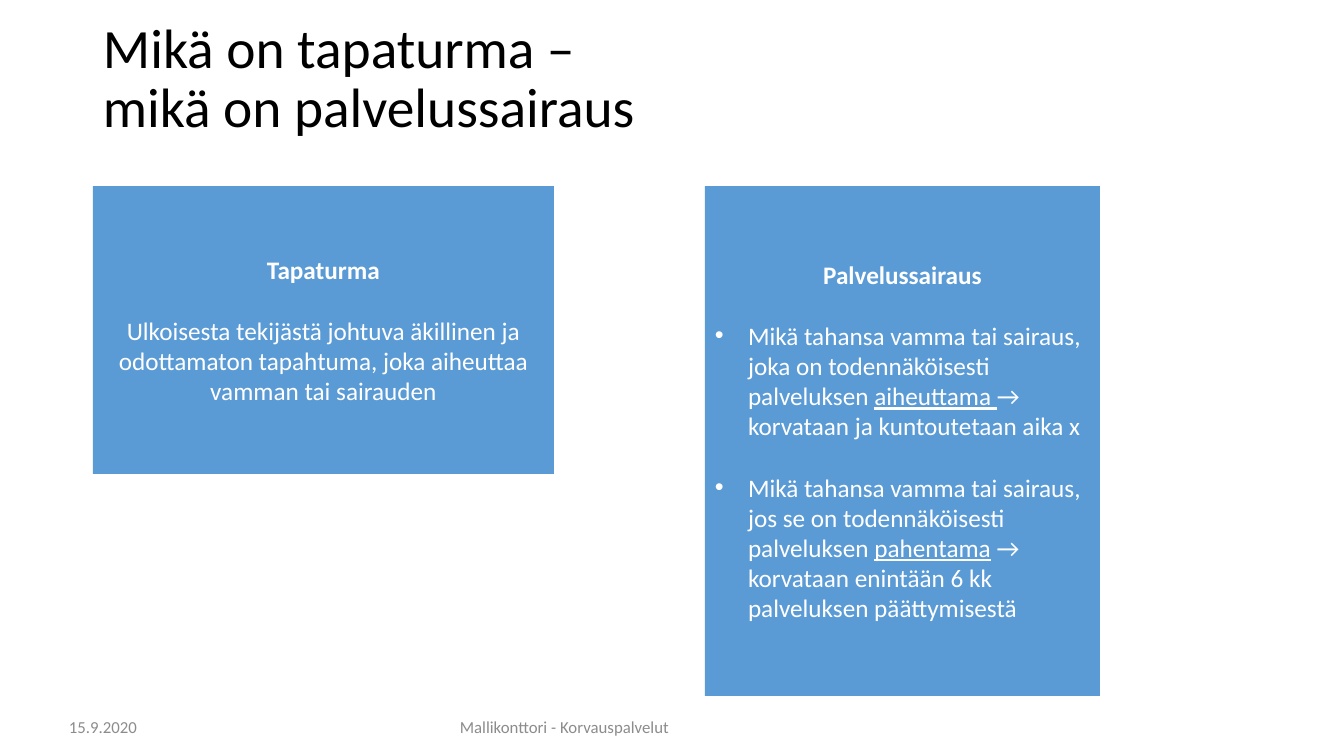
from lxml import etree
from pptx import Presentation, util as u
from pptx.dml.color import RGBColor
from pptx.enum import shapes, text
from pptx.oxml.ns import qn

PX = 914400 / 100.8
LEFT, CENTER = text.PP_ALIGN.LEFT, text.PP_ALIGN.CENTER


def px(n):
    return u.Emu(round(n * PX))


def rgb(value):
    return RGBColor.from_string(value)


class Deck:
    font = "Calibri"
    blue, white, black, grey = "5B9BD5", "FFFFFF", "000000", "8C8C8C"

    def __init__(self, width, height):
        self.prs = Presentation()
        self.prs.slide_width = px(width)
        self.prs.slide_height = px(height)
        self.s = self.prs.slides.add_slide(self.prs.slide_layouts[5])

    def style(self, p, size, color, align=LEFT, bold=False):
        p.alignment = align
        for r in p.runs:
            r.font.name = self.font
            r.font.size = u.Pt(size)
            r.font.bold = bold
            r.font.color.rgb = rgb(color)

    def frame(self, sp):
        tf = sp.text_frame
        tf.word_wrap = True
        tf.auto_size = text.MSO_AUTO_SIZE.NONE
        tf.vertical_anchor = text.MSO_ANCHOR.MIDDLE
        tf.margin_left = tf.margin_right = px(10)
        tf.margin_top = tf.margin_bottom = px(5)
        return tf

    def title(self, words, x, y, w, h):
        sp = self.s.shapes.title
        sp.left, sp.top, sp.width, sp.height = map(px, (x, y, w, h))
        tf = self.frame(sp)
        tf.text = words
        p = tf.paragraphs[0]
        p.line_spacing = 0.9
        self.style(p, 39.6, self.black)

    def label(self, words, x, y, w, h, align=LEFT):
        tf = self.frame(self.s.shapes.add_textbox(*map(px, (x, y, w, h))))
        tf.text = words
        self.style(tf.paragraphs[0], 12, self.grey, align)

    def box(self, heading, x, y, w, h):
        sp = self.s.shapes.add_shape(
            shapes.MSO_SHAPE.RECTANGLE, *map(px, (x, y, w, h)))
        sp.shadow.inherit = False
        sp.fill.solid()
        sp.fill.fore_color.rgb = rgb(self.blue)
        sp.line.fill.background()
        tf = self.frame(sp)
        tf.text = heading
        self.style(tf.paragraphs[0], 18, self.white, CENTER, True)
        return tf

    def body(self, tf, *parts, align=LEFT, gap=22, indent=0, bullet=False):
        p = tf.add_paragraph()
        for i, words in enumerate(parts):
            r = p.add_run()
            r.text = words
            r.font.underline = i % 2 == 1
        p.space_before = u.Pt(gap)
        self.style(p, 18, self.white, align)
        pPr = p._p.get_or_add_pPr()
        pPr.set("marL", str(px(indent)))
        if bullet:
            pPr.set("indent", str(-px(indent)))
            etree.SubElement(pPr, qn("a:buFont")).set("typeface", "Arial")
            etree.SubElement(pPr, qn("a:buChar")).set("char", "•")


def main():
    d = Deck(1344, 756)
    d.title("Mikä on tapaturma –\vmikä on palvelussairaus", 93, 14, 1159, 132)

    accident = d.box("Tapaturma", 93, 186, 461, 288)
    d.body(accident, "Ulkoisesta tekijästä johtuva äkillinen ja odottamaton "
           "tapahtuma, joka aiheuttaa vamman tai sairauden", align=CENTER)

    illness = d.box("Palvelussairaus", 705, 186, 395, 510)
    d.body(illness, "Mikä tahansa vamma tai sairaus, joka on todennäköisesti "
           "palveluksen ", "aiheuttama ", "→", indent=33, bullet=True)
    d.body(illness, "korvataan ja kuntoutetaan aika x", gap=0, indent=33)
    d.body(illness, "Mikä tahansa vamma tai sairaus, jos se on todennäköisesti "
           "palveluksen ", "pahentama",
           " → korvataan enintään 6 kk palveluksen päättymisestä",
           indent=33, bullet=True)

    d.label("15.9.2020", 59, 707, 107, 39)
    d.label("Mallikonttori - Korvauspalvelut", 170, 707, 789, 39, CENTER)
    d.prs.save("out.pptx")


if __name__ == "__main__":
    main()
